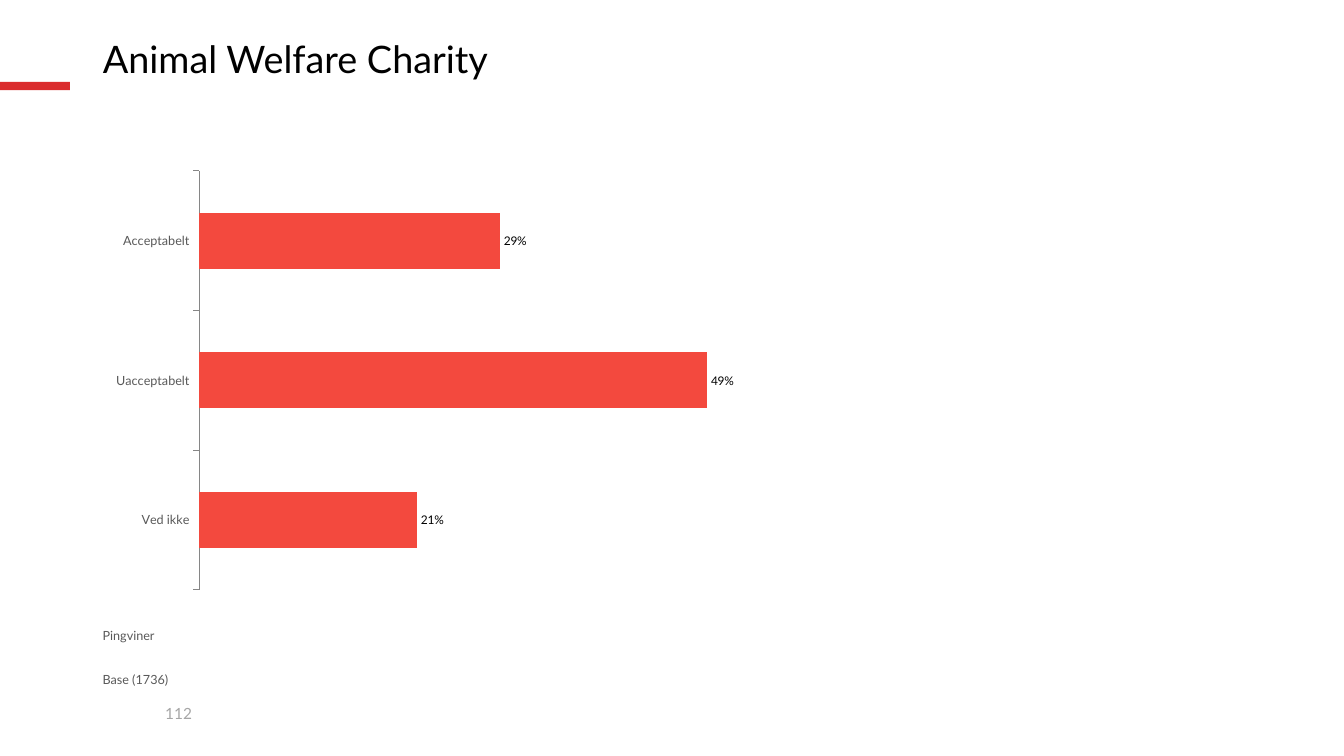
from dataclasses import dataclass

from lxml import etree
from pptx import Presentation
from pptx.chart.data import CategoryChartData
from pptx.dml.color import RGBColor
from pptx.enum.chart import XL_CHART_TYPE as ChartType
from pptx.enum.chart import XL_LABEL_POSITION as LabelPosition
from pptx.enum.chart import XL_TICK_LABEL_POSITION as TickLabels
from pptx.enum.chart import XL_TICK_MARK as TickMark
from pptx.enum.shapes import MSO_SHAPE as Preset
from pptx.enum.text import MSO_ANCHOR as Anchor
from pptx.enum.text import PP_ALIGN as Align
from pptx.oxml.ns import qn
from pptx.util import Pt

FONT = "Lato"
COLORS = {
    "accent": "DA2C2D",
    "bar": "F3493E",
    "title": "000000",
    "note": "595959",
    "number": "A6A6A6",
    "axis": "868686",
}
LEFT, WIDTH = 66.24, 828
ANSWERS = {"Ved ikke": 0.21, "Uacceptabelt": 0.49, "Acceptabelt": 0.29}
PLOT_AREA = {"x": 0.092, "y": 0.02, "w": 0.894, "h": 0.96}


@dataclass
class Note:
    text: str
    left: float
    top: float
    width: float
    height: float
    size: float = 9
    color: str = "note"


NOTES = [
    Note("Pingviner", LEFT, 444.96, WIDTH, 30.96),
    Note("Base (1736)", LEFT, 476.2, WIDTH, 20.16),
    Note("112", 110.88, 499.68, 48.96, 20.88, size=11, color="number"),
]


def rgb(name: str) -> RGBColor:
    return RGBColor.from_string(COLORS[name])


def style_font(font, size: float, color: str) -> None:
    font.name = FONT
    font.size = Pt(size)
    font.bold = False
    font.color.rgb = rgb(color)


def write_text(shape, text: str, *, size: float, color: str,
               anchor=Anchor.TOP, line_spacing: float = 1.0) -> None:
    frame = shape.text_frame
    frame.word_wrap = True
    frame.vertical_anchor = anchor
    frame.margin_left = frame.margin_right = Pt(7.2)
    frame.margin_top = frame.margin_bottom = Pt(3.6)
    paragraph = frame.paragraphs[0]
    paragraph.alignment = Align.LEFT
    paragraph.line_spacing = line_spacing
    run = paragraph.add_run()
    run.text = text
    style_font(run.font, size, color)


def add_note(slide, note: Note) -> None:
    box = slide.shapes.add_textbox(
        Pt(note.left), Pt(note.top), Pt(note.width), Pt(note.height))
    write_text(box, note.text, size=note.size, color=note.color)


def place_plot_area(chart) -> None:
    plot_area = chart.element.find(".//" + qn("c:plotArea"))
    layout = plot_area.find(qn("c:layout"))
    if layout is None:
        layout = etree.Element(qn("c:layout"))
        plot_area.insert(0, layout)
    manual = etree.SubElement(layout, qn("c:manualLayout"))
    settings = {"layoutTarget": "inner", "xMode": "edge", "yMode": "edge"}
    for tag, value in (settings | PLOT_AREA).items():
        etree.SubElement(manual, qn(f"c:{tag}")).set("val", str(value))


def add_answer_chart(slide) -> None:
    answers = CategoryChartData(number_format="0%")
    answers.categories = list(ANSWERS)
    answers.add_series("Series 1", list(ANSWERS.values()))
    chart = slide.shapes.add_chart(
        ChartType.BAR_CLUSTERED, Pt(LEFT), Pt(115.92), Pt(WIDTH), Pt(311.76),
        answers).chart
    chart.has_legend = False
    chart.has_title = False
    style_font(chart.font, 18, "title")
    place_plot_area(chart)

    # Axes
    categories = chart.category_axis
    categories.tick_label_position = TickLabels.LOW
    categories.major_tick_mark = TickMark.OUTSIDE
    categories.has_major_gridlines = False
    categories.format.line.color.rgb = rgb("axis")
    categories.format.line.width = Pt(0.75)
    style_font(categories.tick_labels.font, 9, "note")
    share = chart.value_axis
    share.minimum_scale, share.maximum_scale, share.major_unit = 0, 1, 0.1
    share.tick_labels.number_format = "0.00%"
    share.tick_labels.number_format_is_linked = False
    share.has_major_gridlines = False
    share.visible = False

    # Bars and their labels
    plot = chart.plots[0]
    plot.gap_width, plot.overlap = 150, -10
    plot.vary_by_categories = False
    bars = plot.series[0]
    bars.format.fill.solid()
    bars.format.fill.fore_color.rgb = rgb("bar")
    labels = bars.data_labels
    labels.show_value = True
    labels.position = LabelPosition.OUTSIDE_END
    labels.number_format = "0%"
    labels.number_format_is_linked = False
    style_font(labels.font, 8.5, "title")


def main() -> None:
    deck = Presentation()
    deck.slide_width, deck.slide_height = Pt(960), Pt(540)
    slide = deck.slides.add_slide(deck.slide_layouts[5])

    # Accent bar at the left edge
    accent = slide.shapes.add_shape(
        Preset.RECTANGLE, Pt(0), Pt(58.5), Pt(50), Pt(6))
    accent.shadow.inherit = False
    accent.fill.solid()
    accent.fill.fore_color.rgb = rgb("accent")
    accent.line.fill.background()

    # Title
    title = slide.shapes.title
    title.left, title.top = Pt(LEFT), Pt(25.2)
    title.width, title.height = Pt(WIDTH), Pt(36.72)
    write_text(title, "Animal Welfare Charity", size=27, color="title",
               anchor=Anchor.MIDDLE, line_spacing=0.9)

    # Chart, notes and page number
    add_answer_chart(slide)
    for note in NOTES:
        add_note(slide, note)

    deck.save("out.pptx")


if __name__ == "__main__":
    main()
